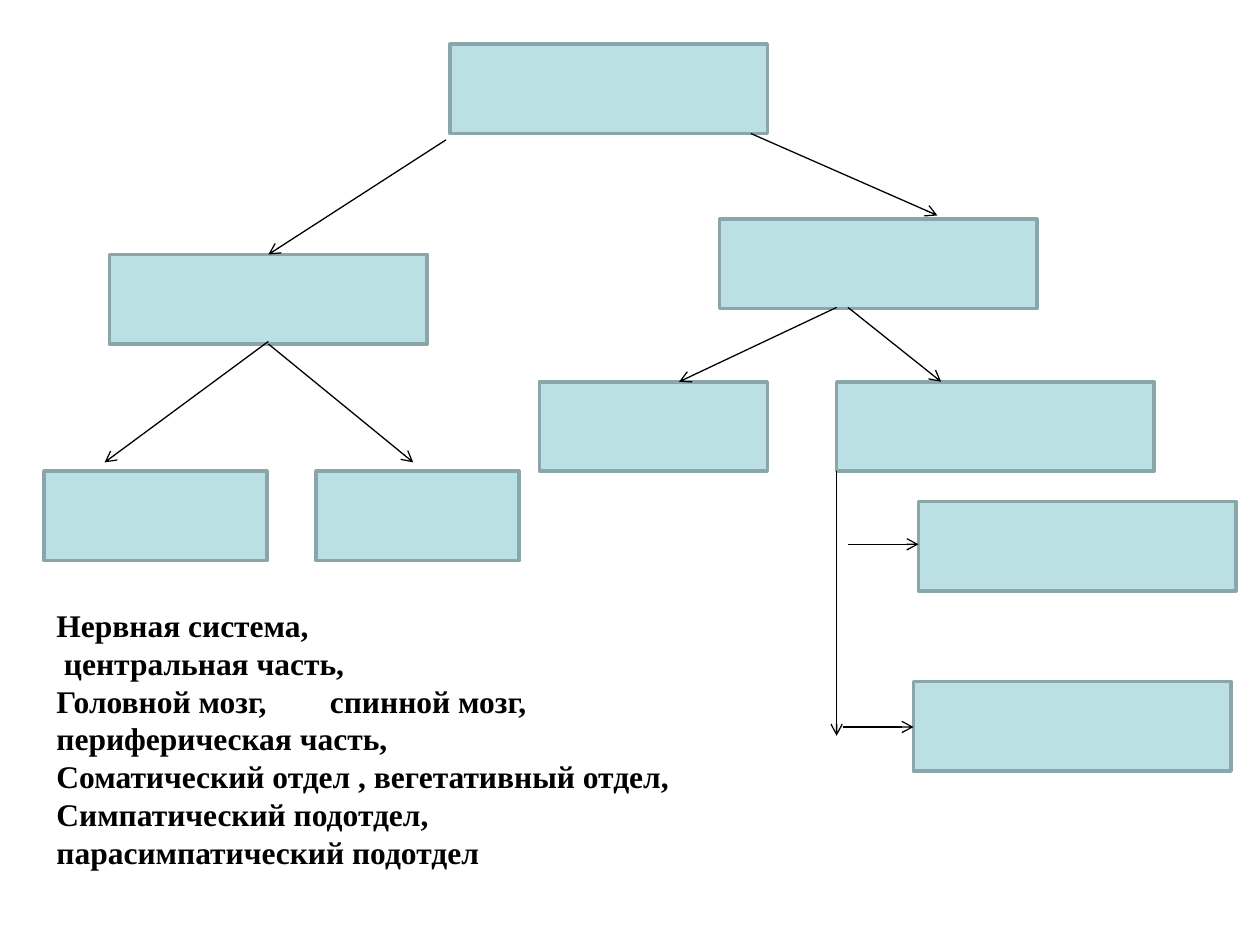
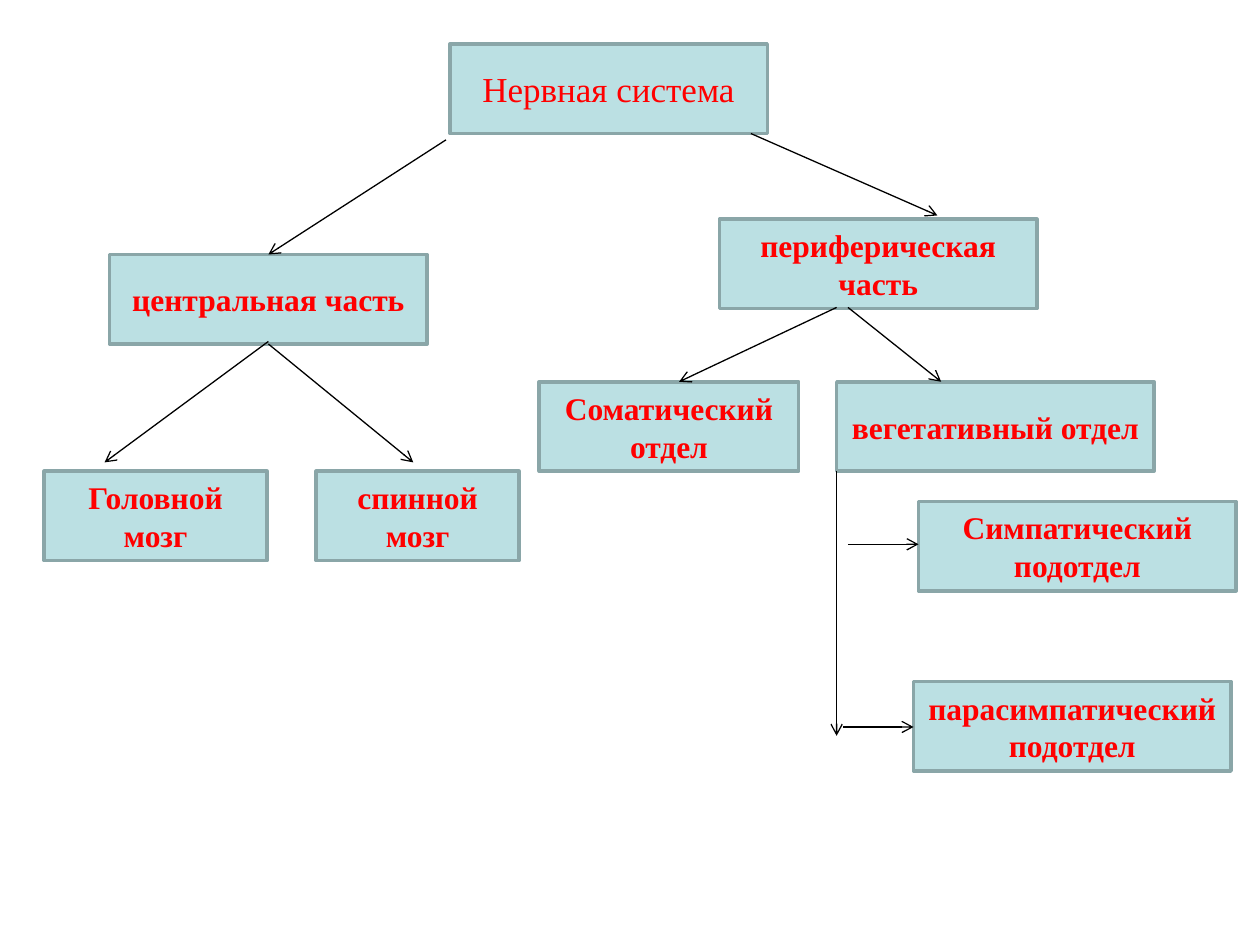
from lxml.etree import SubElement
from pptx import Presentation
from pptx.dml.color import RGBColor
from pptx.enum.shapes import MSO_CONNECTOR, MSO_SHAPE
from pptx.enum.text import MSO_ANCHOR, PP_ALIGN
from pptx.oxml.ns import qn
from pptx.util import Inches, Pt

WIDTH, HEIGHT = Inches(10), Inches(7.5)
COLUMN, ROW = WIDTH / 100, HEIGHT / 75
FONT = "Times New Roman"
PANEL, BORDER, INK, ANSWER = "BBE0E3", "8AA6A8", "000000", "FF0000"
NODE_WIDTH, NODE_HEIGHT = 25.2, 7.1
SOMATIC = "Соматический отдел"
ROOT = "Нервная система"

NODES = {
    ROOT: (35.7, 3.5, NODE_WIDTH),
    "центральная часть": (8.7, 20.2, NODE_WIDTH),
    "периферическая часть": (57.1, 17.4, NODE_WIDTH),
    "Головной мозг": (3.5, 37.4, 17.7),
    "спинной мозг": (25.1, 37.4, 16.1),
    "Симпатический подотдел": (72.9, 39.8, NODE_WIDTH),
    "парасимпатический подотдел": (72.5, 54.1, NODE_WIDTH),
    "вегетативный отдел": (66.4, 30.3, NODE_WIDTH),
    SOMATIC: (42.8, 30.3, 18.1),
}
SOMATIC_ANSWER_WIDTH = 20.6

BRANCHES = [
    (59.6, 10.6, 74.4, 17.1),
    (35.4, 11.1, 21.3, 20.2),
    (21.3, 27.3, 32.8, 36.7),
    (21.3, 27.1, 8.3, 36.7),
    (66.4, 37.4, 66.4, 58.4),
    (66.9, 57.7, 72.5, 57.7),
    (67.3, 43.2, 72.9, 43.2),
    (67.3, 24.4, 74.7, 30.3),
    (66.4, 24.4, 53.9, 30.3),
]

TERMS = [
    "Нервная система,",
    "центральная часть,",
    "Головной мозг,\tспинной мозг,",
    "периферическая часть,",
    "Соматический отдел , вегетативный отдел,",
    "Симпатический подотдел,",
    "парасимпатический подотдел",
]


def color(value):
    return RGBColor.from_string(value)


def place(column, row):
    return round(column * COLUMN), round(row * ROW)


def style(paragraph, ink, size=18, bold=True):
    paragraph.font.name = FONT
    paragraph.font.size = Pt(size)
    paragraph.font.bold = bold
    paragraph.font.color.rgb = color(ink)


def add_node(slide, column, row, width, label):
    node = slide.shapes.add_shape(
        MSO_SHAPE.RECTANGLE, *place(column, row), *place(width, NODE_HEIGHT)
    )
    node.shadow.inherit = False
    node.fill.solid()
    node.fill.fore_color.rgb = color(PANEL)
    node.line.color.rgb = color(BORDER)
    node.line.width = Pt(2)
    if label:
        node.text_frame.word_wrap = True
        node.text_frame.vertical_anchor = MSO_ANCHOR.MIDDLE
        paragraph = node.text_frame.paragraphs[0]
        paragraph.text = label
        paragraph.alignment = PP_ALIGN.CENTER
        is_root = label == ROOT
        style(paragraph, ANSWER, 20 if is_root else 18, not is_root)


def add_branch(slide, from_column, from_row, to_column, to_row):
    branch = slide.shapes.add_connector(
        MSO_CONNECTOR.STRAIGHT, *place(from_column, from_row), *place(to_column, to_row)
    )
    branch.line.color.rgb = color(INK)
    branch.line.width = Pt(0.75)
    SubElement(branch.line._get_or_add_ln(), qn("a:tailEnd"), type="arrow")
    SubElement(branch._element.spPr, qn("a:effectLst"))


def add_terms(slide):
    terms = slide.shapes.add_textbox(*place(3.5, 47.6), *place(52.4, 22.2))
    frame = terms.text_frame
    frame.word_wrap = True
    for index, term in enumerate(TERMS):
        paragraph = frame.add_paragraph() if index else frame.paragraphs[0]
        paragraph.text = term
        properties = paragraph._p.get_or_add_pPr()
        if index == 1:
            properties.set("marL", str(Inches(0.06)))
        if "\t" in term:
            stops = SubElement(properties, qn("a:tabLst"))
            SubElement(stops, qn("a:tab"), pos=str(Inches(2.17)), algn="l")
        style(paragraph, INK)


def add_scheme(deck, answered):
    slide = deck.slides.add_slide(deck.slide_layouts[6])
    for name, (column, row, width) in NODES.items():
        if answered and name == SOMATIC:
            width = SOMATIC_ANSWER_WIDTH
        add_node(slide, column, row, width, name if answered else "")
    for branch in BRANCHES:
        add_branch(slide, *branch)
    return slide


def main():
    deck = Presentation()
    deck.slide_width, deck.slide_height = WIDTH, HEIGHT
    add_terms(add_scheme(deck, answered=False))
    add_scheme(deck, answered=True)
    deck.save("out.pptx")


if __name__ == "__main__":
    main()
